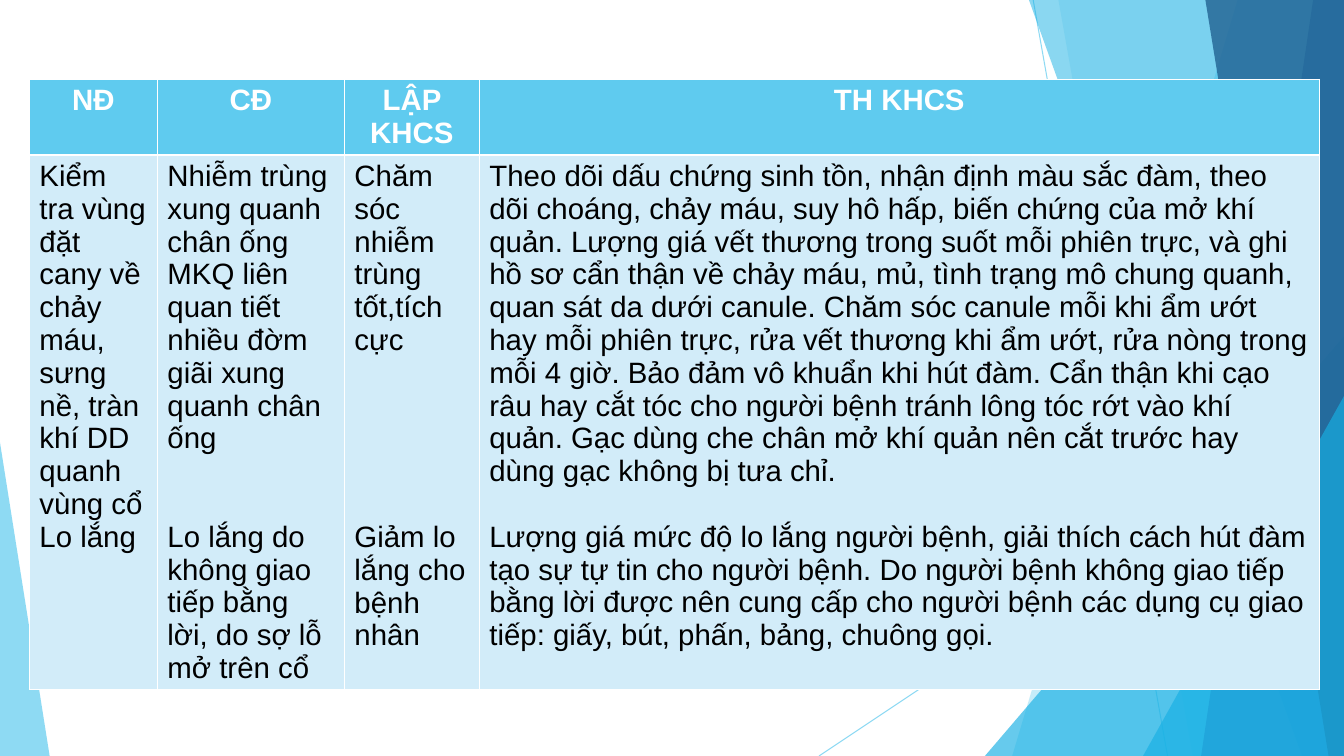
from pptx import Presentation
from pptx.dml.color import RGBColor
from pptx.enum.shapes import MSO_CONNECTOR, MSO_SHAPE
from pptx.enum.text import PP_ALIGN
from pptx.oxml.ns import qn
from pptx.util import Pt
from lxml import etree

STRAIGHT = MSO_CONNECTOR.STRAIGHT
TRIANGLE = MSO_SHAPE.ISOSCELES_TRIANGLE
LEFT, CENTER = PP_ALIGN.LEFT, PP_ALIGN.CENTER

W, H = 960, 540
SIZE = 21
LINE_HEIGHT = 23.45
COLORS = {
    "sky": "5FCBEF",
    "cyan": "17B0E4",
    "blue": "2E83C3",
    "navy": "226292",
    "pale": "D2ECF9",
    "white": "FFFFFF",
    "black": "000000",
}

RAYS = [((738, 0), (834, H)), ((W, 290), (585, H))]
BACK_BANDS = [(884, 723, "sky", 36), (756, 852, "sky", 20)]
FRONT_BANDS = [(735, 930, "cyan", 50), (938, 858, "blue", 70), (861, 949, "navy", 80)]

COLUMNS = [91.4, 133.6, 96.4, 600]
ROWS = [54, 382]
HEADERS = ["NĐ", "CĐ", "LẬP KHCS", "TH KHCS"]
BODY = [
    ("Kiểm tra vùng đặt cany về chảy máu, sưng nề, tràn khí DD quanh vùng cổ",
     0, "Lo lắng"),
    ("Nhiễm trùng xung quanh chân ống MKQ liên quan tiết nhiều đờm giãi xung "
     "quanh chân ống",
     2, "Lo lắng do không giao tiếp bằng lời, do sợ lỗ mở trên cổ"),
    ("Chăm sóc nhiễm trùng tốt,tích cực",
     5, "Giảm lo lắng cho bệnh nhân"),
    ("Theo dõi dấu chứng sinh tồn, nhận định màu sắc đàm, theo dõi choáng, "
     "chảy máu, suy hô hấp, biến chứng của mở khí quản. Lượng giá vết thương "
     "trong suốt mỗi phiên trực, và ghi hồ sơ cẩn thận về chảy máu, mủ, tình "
     "trạng mô chung quanh, quan sát da dưới canule. Chăm sóc canule mỗi khi "
     "ẩm ướt hay mỗi phiên trực, rửa vết thương khi ẩm ướt, rửa nòng trong mỗi "
     "4 giờ. Bảo đảm vô khuẩn khi hút đàm. Cẩn thận khi cạo râu hay cắt tóc "
     "cho người bệnh tránh lông tóc rớt vào khí quản. Gạc dùng che chân mở khí "
     "quản nên cắt trước hay dùng gạc không bị tưa chỉ.",
     1, "Lượng giá mức độ lo lắng người bệnh, giải thích cách hút đàm tạo sự "
     "tự tin cho người bệnh. Do người bệnh không giao tiếp bằng lời được nên "
     "cung cấp cho người bệnh các dụng cụ giao tiếp: giấy, bút, phấn, bảng, "
     "chuông gọi."),
]


def write(p, text, color="black", bold=False, align=LEFT, before=0):
    p.alignment = align
    p.space_before = Pt(before)
    r = p.add_run()
    r.text = text
    r.font.name = "Arial"
    r.font.size = Pt(SIZE)
    r.font.bold = bold
    r.font.color.rgb = RGBColor.from_string(COLORS[color])


class Deck:
    def __init__(self, s):
        self.s = s

    def fade(self, sp, alpha):
        for clr in sp._element.spPr.iter(qn("a:srgbClr")):
            etree.SubElement(clr, qn("a:alpha")).set("val", str(alpha * 1000))

    def paint(self, sp, color, alpha):
        sp.shadow.inherit = False
        sp.fill.solid()
        sp.fill.fore_color.rgb = RGBColor.from_string(COLORS[color])
        sp.line.fill.background()
        self.fade(sp, alpha)

    def ray(self, start, end):
        sp = self.s.shapes.add_connector(STRAIGHT, *map(Pt, start + end))
        sp.line.width = Pt(0.75)
        sp.line.color.rgb = RGBColor.from_string(COLORS["sky"])
        self.fade(sp, 70)
        etree.SubElement(sp._element.spPr, qn("a:effectLst"))

    def band(self, top, bottom, color, alpha):
        fb = self.s.shapes.build_freeform(Pt(top), 0)
        points = [(W, 0), (W, H), (bottom, H)]
        fb.add_line_segments([(Pt(x), Pt(y)) for x, y in points], close=True)
        self.paint(fb.convert_to_shape(), color, alpha)

    def triangle(self, x, y, w, apex, color, alpha):
        sp = self.s.shapes.add_shape(TRIANGLE, Pt(x), Pt(y), Pt(w), Pt(H - y))
        sp.adjustments[0] = apex
        self.paint(sp, color, alpha)

    def cell(self, cell, fill):
        cell.fill.solid()
        cell.fill.fore_color.rgb = RGBColor.from_string(COLORS[fill])
        return cell.text_frame

    def table(self, x, y):
        frame = self.s.shapes.add_table(len(ROWS), len(COLUMNS), Pt(x), Pt(y),
                                        Pt(sum(COLUMNS)), Pt(sum(ROWS)))
        table = frame.table
        for row, height in zip(table.rows, ROWS):
            row.height = Pt(height)
        for i, width in enumerate(COLUMNS):
            table.columns[i].width = Pt(width)
            tf = self.cell(table.cell(0, i), "sky")
            write(tf.paragraphs[0], HEADERS[i], color="white", bold=True, align=CENTER)
            first, gap_lines, second = BODY[i]
            tf = self.cell(table.cell(1, i), "pale")
            write(tf.paragraphs[0], first)
            write(tf.add_paragraph(), second, before=gap_lines * LINE_HEIGHT)


def main():
    prs = Presentation()
    prs.slide_width, prs.slide_height = Pt(W), Pt(H)
    deck = Deck(prs.slides.add_slide(prs.slide_layouts[6]))
    for start, end in RAYS:
        deck.ray(start, end)
    for band in BACK_BANDS:
        deck.band(*band)
    deck.triangle(703.5, 240, 256.5, 1, "cyan", 66)
    for band in FRONT_BANDS:
        deck.band(*band)
    deck.triangle(816.5, 283, 143.5, 1, "cyan", 66)
    deck.triangle(0, 316, 35.5, 0, "sky", 70)
    deck.table(21, 56.7)
    prs.save("out.pptx")


if __name__ == "__main__":
    main()
